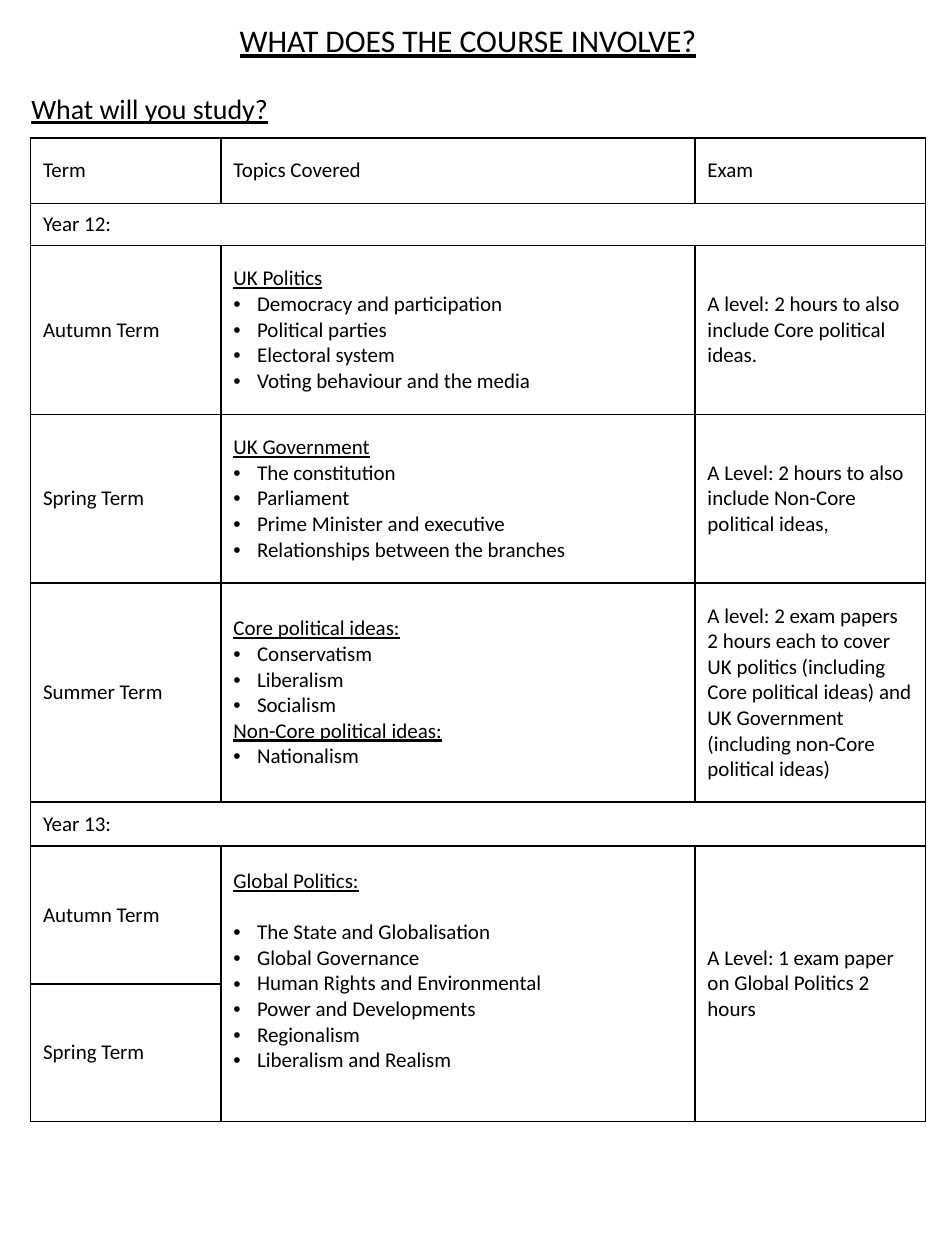
"""Build a one-page politics course overview with a table of terms, topics and exams."""
from lxml import etree
from pptx import Presentation
from pptx.dml.color import RGBColor
from pptx.enum.text import MSO_ANCHOR, PP_ALIGN
from pptx.oxml.ns import qn
from pptx.util import Pt

MIDDLE = MSO_ANCHOR.MIDDLE
LEFT, CENTER = PP_ALIGN.LEFT, PP_ALIGN.CENTER
BLACK = "000000"
LINE = 14.65


def color(parent, code):
    etree.SubElement(parent, qn("a:srgbClr"), val=code)


def style(para, size, under=False):
    font = para.font
    font.name, font.size, font.underline = "Calibri", Pt(size), under
    font.color.rgb = RGBColor.from_string(BLACK)


deck = Presentation()
deck.slide_width, deck.slide_height = Pt(540), Pt(720)
slide = deck.slides.add_slide(deck.slide_layouts[6])

titles = [
    ("WHAT DOES THE COURSE INVOLVE?", 18, CENTER, (9.4, 8.6, 516.2, 29)),
    ("What will you study?", 16, LEFT, (10.8, 49, 519.8, 55.4)),
]
for text, size, align, area in titles:
    frame = slide.shapes.add_textbox(*map(Pt, area)).text_frame
    frame.word_wrap = True
    para = frame.paragraphs[0]
    para.text, para.alignment = text, align
    style(para, size, True)

# Each topic group is a heading and its bullet points.
rows = [
    (37.4, "Term", "Topics Covered", "Exam"),
    (24, "Year 12:", "", ""),
    (96.5, "Autumn Term",
     [("UK Politics", ["Democracy and participation", "Political parties",
                       "Electoral system", "Voting behaviour and the media"])],
     "A level: 2 hours to also include Core political ideas."),
    (96.5, "Spring Term",
     [("UK Government", ["The constitution", "Parliament",
                         "Prime Minister and executive",
                         "Relationships between the branches"])],
     "A Level: 2 hours to also include Non-Core political ideas,"),
    (125.2, "Summer Term",
     [("Core political ideas:", ["Conservatism", "Liberalism", "Socialism"]),
      ("Non-Core political ideas:", ["Nationalism"])],
     "A level: 2 exam papers 2 hours each to cover UK politics (including "
     "Core political ideas) and UK Government (including non-Core political ideas)"),
    (25, "Year 13:", "", ""),
    (78.8, "Autumn Term",
     [("Global Politics:", ["The State and Globalisation", "Global Governance",
                            "Human Rights and Environmental",
                            "Power and Developments", "Regionalism",
                            "Liberalism and Realism"])],
     "A Level: 1 exam paper on Global Politics 2 hours"),
    (78.8, "Spring Term", "", ""),
]
widths = [108.8, 270.9, 131.7]
high = sum(row[0] for row in rows)
table = slide.shapes.add_table(len(rows), len(widths), Pt(17.4), Pt(78.9),
                               Pt(sum(widths)), Pt(high)).table
table.first_row = table.horz_banding = False
for col, width in zip(table.columns, widths):
    col.width = Pt(width)

for r, (height, *texts) in enumerate(rows):
    table.rows[r].height = Pt(height)
    for c, text in enumerate(texts):
        cell = table.cell(r, c)
        cell.vertical_anchor = MIDDLE
        props = cell._tc.get_or_add_tcPr()
        for side in ("lnL", "lnR", "lnT", "lnB"):
            edge = etree.SubElement(props, qn("a:" + side), w=str(Pt(1)))
            color(etree.SubElement(edge, qn("a:solidFill")), BLACK)
        cell.fill.background()

        groups = text if isinstance(text, list) else []
        items = [(item, item == head) for head, points in groups
                 for item in [head, *points]] or [(text, None)]
        frame = cell.text_frame
        for i, (item, head) in enumerate(items):
            para = frame.add_paragraph() if i else frame.paragraphs[0]
            para.text = item
            if head is False:
                form = para._p.get_or_add_pPr()
                form.set("marL", str(Pt(13.5)))
                form.set("indent", str(Pt(-13.5)))
                color(etree.SubElement(form, qn("a:buClr")), BLACK)
                etree.SubElement(form, qn("a:buFont"), typeface="Arial")
                etree.SubElement(form, qn("a:buChar"), char="•")
            style(para, 12, bool(head))

world = table.cell(6, 1)
world.text_frame.paragraphs[0].space_after = Pt(LINE)
world.margin_bottom = Pt(3.6 + LINE)

for top, left, low, right in [(1, 0, 1, 2), (5, 0, 5, 2), (6, 1, 7, 1), (6, 2, 7, 2)]:
    table.cell(top, left).merge(table.cell(low, right))

deck.save("out.pptx")
